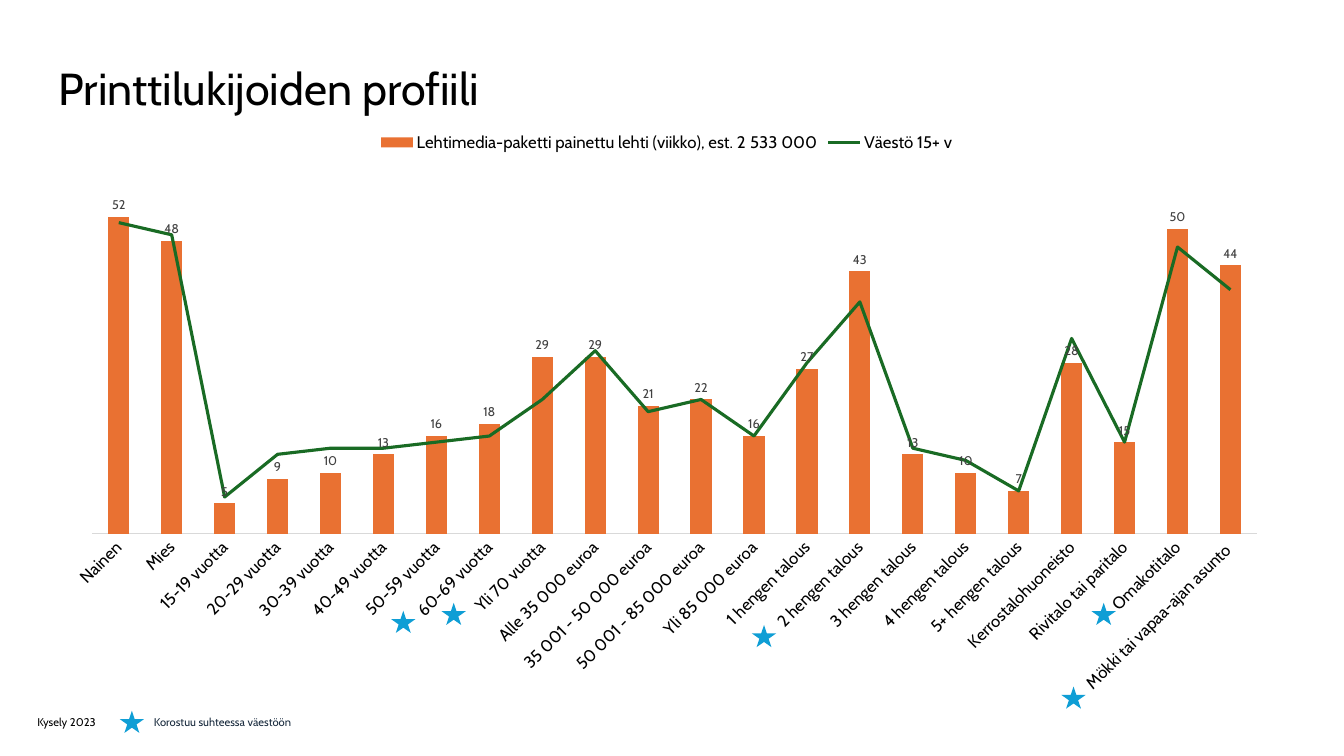
from lxml import etree
from pptx import Presentation
from pptx import util as u
from pptx.chart.data import CategoryChartData
from pptx.dml.color import RGBColor
from pptx.enum import chart as ch, shapes, text
from pptx.oxml import parse_xml
from pptx.oxml.ns import nsdecls, qn

FONT = "Cabin"
COLORS = {
    "text": "000000", "legend": "182A3D", "label": "404040", "axis": "D9D9D9",
    "readers": "E97132", "population": "196B24", "star": "0F9ED5",
}
READERS = "Lehtimedia-paketti painettu lehti (viikko), est. 2\u00a0533 000"
POPULATION = "Väestö 15+ v"
PROFILE = [
    ("Nainen", 52, 51),
    ("Mies", 48, 49),
    ("15-19 vuotta", 5, 6),
    ("20-29 vuotta", 9, 13),
    ("30-39 vuotta", 10, 14),
    ("40-49 vuotta", 13, 14),
    ("50-59 vuotta", 16, 15),
    ("60-69 vuotta", 18, 16),
    ("Yli 70 vuotta", 29, 22),
    ("Alle 35 000 euroa", 29, 30),
    ("35 001 - 50 000 euroa", 21, 20),
    ("50 001 - 85 000 euroa", 22, 22),
    ("Yli 85 000 euroa", 16, 16),
    ("1 hengen talous", 27, 28),
    ("2 hengen talous", 43, 38),
    ("3 hengen talous", 13, 14),
    ("4 hengen talous", 10, 12),
    ("5+ hengen talous", 7, 7),
    ("Kerrostalohuoneisto", 28, 32),
    ("Rivitalo tai paritalo", 15, 15),
    ("Omakotitalo", 50, 47),
    ("Mökki tai vapaa-ajan asunto ", 44, 40),
]
STAR_SIZE = (0.61, 0.56)
STAR_OFFSETS = [(9.86, 12.14), (8.59, 12.34), (17.68, 12.7), (26.24, 12.14), (25.48, 14.25)]


def rgb(name):
    return RGBColor.from_string(COLORS[name])


def style_font(font, size, color):
    font.name = FONT
    font.size = u.Pt(size)
    font.bold = False
    font.color.rgb = rgb(color)


def add_title(s, box, words):
    sp = s.shapes.title
    sp.left, sp.top, sp.width, sp.height = map(u.Cm, box)
    tf = sp.text_frame
    tf.text = words
    tf.vertical_anchor = text.MSO_ANCHOR.MIDDLE
    p = tf.paragraphs[0]
    p.alignment = text.PP_ALIGN.LEFT
    p.line_spacing = 0.9
    style_font(p.font, 32, "text")


def add_label(s, box, words, color, anchor):
    tf = s.shapes.add_textbox(*map(u.Cm, box)).text_frame
    tf.word_wrap = True
    tf.vertical_anchor = anchor
    tf.text = words
    style_font(tf.paragraphs[0].font, 8, color)


def add_star(s, left, top):
    sp = s.shapes.add_shape(shapes.MSO_SHAPE.STAR_5_POINT, *map(u.Cm, (left, top, *STAR_SIZE)))
    sp.shadow.inherit = False
    sp.fill.solid()
    sp.fill.fore_color.rgb = rgb("star")
    sp.line.fill.background()


def turn_second_series_into_line(chart):
    bars = chart.plots[0]._element
    ser = bars.findall(qn("c:ser"))[1]
    for invert in ser.findall(qn("c:invertIfNegative")):
        ser.remove(invert)
    line = parse_xml(
        f'<c:lineChart {nsdecls("c")}><c:grouping val="standard"/>'
        '<c:varyColors val="0"/><c:marker val="1"/></c:lineChart>')
    line.insert(2, ser)
    for ax in bars.findall(qn("c:axId")):
        etree.SubElement(line, qn("c:axId")).set("val", ax.get("val"))
    bars.addnext(line)


def set_plot_area(chart, x, y, w, h):
    area = chart._chartSpace.chart.plotArea
    for layout in area.findall(qn("c:layout")):
        area.remove(layout)
    sizes = "".join(f'<c:{k} val="{v}"/>' for k, v in zip("xywh", (x, y, w, h)))
    area.insert(0, parse_xml(
        f'<c:layout {nsdecls("c")}><c:manualLayout><c:layoutTarget val="inner"/>'
        f'<c:xMode val="edge"/><c:yMode val="edge"/>{sizes}</c:manualLayout></c:layout>'))


def add_profile_chart(s, box):
    data = CategoryChartData()
    data.categories, readers, population = zip(*PROFILE)
    data.add_series(READERS, readers)
    data.add_series(POPULATION, population)
    chart = s.shapes.add_chart(
        ch.XL_CHART_TYPE.COLUMN_CLUSTERED, *map(u.Cm, box), data).chart
    style_font(chart.font, 10, "text")
    chart.has_title = False
    chart.has_legend = True
    chart.legend.position = ch.XL_LEGEND_POSITION.TOP
    chart.legend.include_in_layout = False
    style_font(chart.legend.font, 12, "text")

    values = chart.value_axis
    values.minimum_scale, values.maximum_scale = 0, 60
    values.has_major_gridlines = False
    values.visible = False
    groups = chart.category_axis
    groups.major_tick_mark = ch.XL_TICK_MARK.NONE
    groups.format.line.color.rgb = rgb("axis")
    groups.format.line.width = u.Pt(0.75)
    style_font(groups.tick_labels.font, 12, "text")
    body = groups._element.find(qn("c:txPr")).find(qn("a:bodyPr"))
    body.set("rot", "-2700000")
    body.set("vert", "horz")

    turn_second_series_into_line(chart)
    bars, line = chart.plots
    bars.gap_width = 150
    bars.vary_by_categories = False
    columns = bars.series[0]
    columns.format.fill.solid()
    columns.format.fill.fore_color.rgb = rgb("readers")
    labels = columns.data_labels
    labels.show_value = True
    labels.position = ch.XL_LABEL_POSITION.OUTSIDE_END
    style_font(labels.font, 9, "label")
    curve = line.series[0]
    curve.smooth = False
    curve.marker.style = ch.XL_MARKER_STYLE.NONE
    curve.format.line.color.rgb = rgb("population")
    curve.format.line.width = u.Pt(2.25)
    set_plot_area(chart, 0.034, 0.08, 0.945, 0.626)

    for dx, dy in STAR_OFFSETS:
        add_star(s, box[0] + dx, box[1] + dy)


def add_footer(s, box):
    left, top, width, height = box
    add_label(s, (left, top, 2.67, height), "Kysely 2023", "text", text.MSO_ANCHOR.MIDDLE)
    add_star(s, left + 2.33, top + 0.23)
    add_label(s, (left + 2.94, top + 0.23, width - 2.94, 0.61),
              "Korostuu suhteessa väestöön", "legend", text.MSO_ANCHOR.TOP)


def main():
    prs = Presentation()
    prs.slide_width, prs.slide_height = u.Cm(33.87), u.Cm(19.05)
    s = prs.slides.add_slide(prs.slide_layouts.get_by_name("Title Only"))
    add_title(s, (1.22, 1.27, 31.39, 2.06), "Printtilukijoiden profiili")
    add_profile_chart(s, (1.27, 3.05, 31.06, 14.73))
    add_footer(s, (0.69, 17.68, 8.53, 1.02))
    prs.save("out.pptx")


if __name__ == "__main__":
    main()
